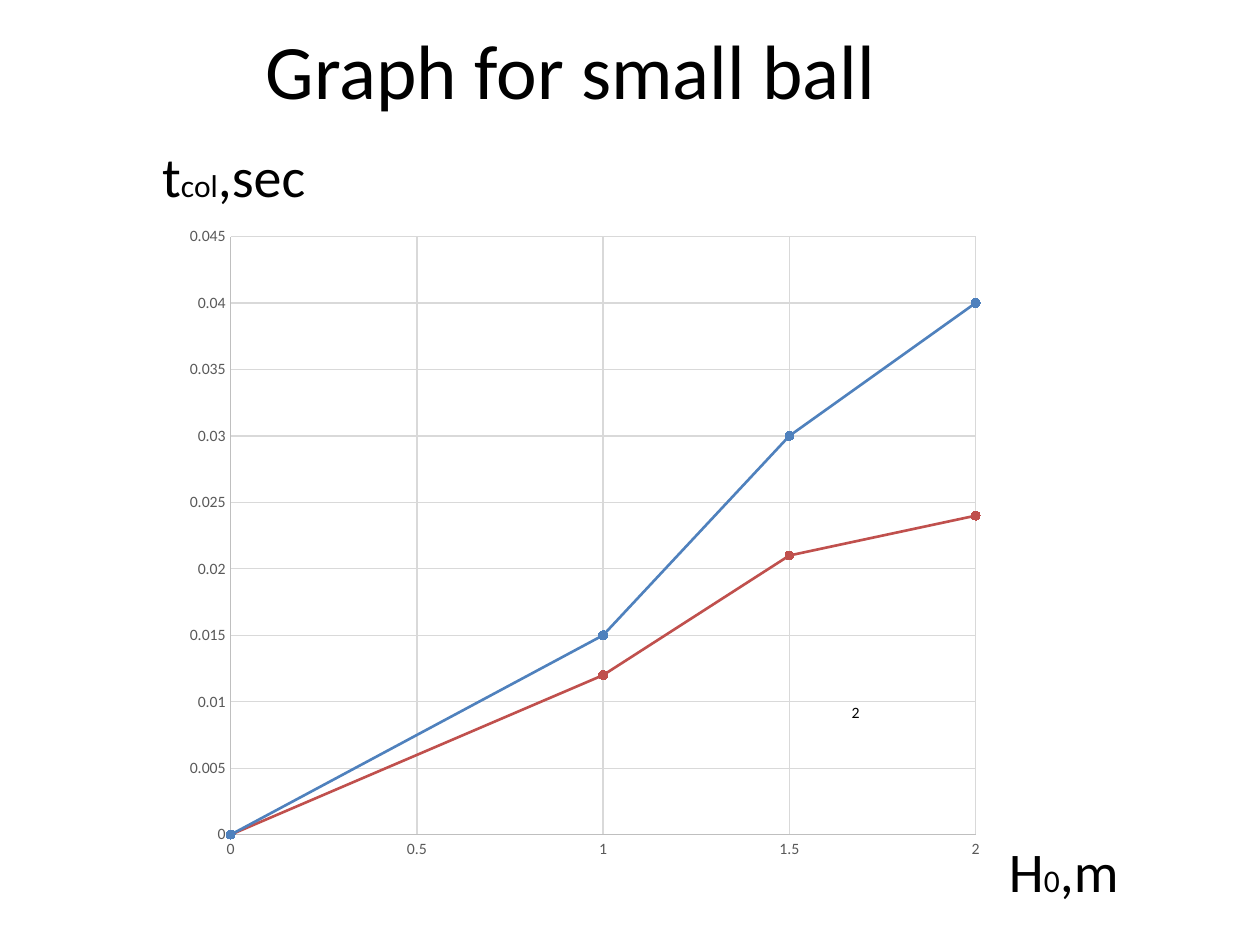
from dataclasses import dataclass

from lxml import etree
from pptx import Presentation
from pptx.chart.data import XyChartData
from pptx.dml.color import RGBColor
from pptx.enum.chart import XL_CHART_TYPE, XL_MARKER_STYLE, XL_TICK_MARK
from pptx.oxml.ns import qn
from pptx.util import Cm, Pt

SCATTER_LINES = XL_CHART_TYPE.XY_SCATTER_LINES
CIRCLE = XL_MARKER_STYLE.CIRCLE
NO_TICK = XL_TICK_MARK.NONE


@dataclass(frozen=True)
class Theme:
    font: str = "Calibri"
    text: str = "000000"
    axis_text: str = "595959"
    axis_line: str = "BFBFBF"
    grid: str = "D9D9D9"
    series: tuple = ("4F81BD", "C0504D")
    title_size: int = 44
    label_size: int = 32
    subscript_size: int = 18
    small_size: int = 9


THEME = Theme()

DROP_HEIGHTS = (0, 1, 1.5, 2)
COLLISION_TIMES = {
    "Series 1": (0, 0.015, 0.03, 0.04),
    "Series 2": (0, 0.012, 0.021, 0.024),
}

# Boxes in centimetres: left, top, width, height
TITLE_BOX = (5.11, 0.33, 13.41, 2.11)
CHART_BOX = (3.51, 4.32, 16.61, 13.26)
PLOT_BOX = (1.14, 0.45, 15.02, 12.06)  # relative to the chart
TIME_BOX = (3.02, 2.72, 3.8, 1.6)
HEIGHT_BOX = (20.09, 16.74, 3.61, 1.6)
NOTE_BOX = (17.17, 14.05, 0.23, 0.56)


def add_text(page, box, *spans, side_inset=0.25):
    """Add one paragraph made of (text, size) spans."""
    shape = page.shapes.add_textbox(*map(Cm, box))
    frame = shape.text_frame
    frame.word_wrap = True
    frame.margin_left = frame.margin_right = Cm(side_inset)
    para = frame.paragraphs[0]
    for text, size in spans:
        span = para.add_run()
        span.text = text
        span.font.name = THEME.font
        span.font.size = Pt(size)
        span.font.color.rgb = RGBColor.from_string(THEME.text)


def add_axis_label(page, box, symbol, subscript, unit):
    add_text(page, box, (symbol, THEME.label_size),
             (subscript, THEME.subscript_size), (unit, THEME.label_size))


def style_line(line, color, width):
    line.color.rgb = RGBColor.from_string(color)
    line.width = Pt(width)


def style_axis(axis, maximum, step):
    axis.minimum_scale, axis.maximum_scale, axis.major_unit = 0, maximum, step
    axis.major_tick_mark = axis.minor_tick_mark = NO_TICK
    axis.has_major_gridlines = True
    style_line(axis.major_gridlines.format.line, THEME.grid, 0.75)
    style_line(axis.format.line, THEME.axis_line, 0.75)
    labels = axis.tick_labels
    labels.number_format, labels.number_format_is_linked = "General", False
    labels.font.name = THEME.font
    labels.font.size = Pt(THEME.small_size)
    labels.font.color.rgb = RGBColor.from_string(THEME.axis_text)


def fix_plot_area(chart, plot_box, chart_box):
    """Give the inner plot area a fixed place in the chart."""
    area = chart.element.find(".//" + qn("c:plotArea"))
    for old in area.findall(qn("c:layout")):
        area.remove(old)
    layout = etree.Element(qn("c:layout"))
    area.insert(0, layout)
    manual = etree.SubElement(layout, qn("c:manualLayout"))
    settings = {"layoutTarget": "inner", "xMode": "edge", "yMode": "edge"}
    for tag, length, whole in zip("xywh", plot_box, chart_box[2:] * 2):
        settings[tag] = length / whole
    for tag, value in settings.items():
        etree.SubElement(manual, qn("c:" + tag)).set("val", str(value))


def add_time_chart(page, box):
    data = XyChartData()
    for name, times in COLLISION_TIMES.items():
        points = data.add_series(name)
        for height, time in zip(DROP_HEIGHTS, times):
            points.add_data_point(height, time)
    chart = page.shapes.add_chart(SCATTER_LINES, *map(Cm, box), data).chart
    chart.has_legend = False
    chart.has_title = False
    chart.font.name = THEME.font
    style_axis(chart.category_axis, 2, 0.5)
    style_axis(chart.value_axis, 0.045, 0.005)
    chart.plots[0].vary_by_categories = False
    for series, color in zip(chart.plots[0].series, THEME.series):
        series.smooth = False
        style_line(series.format.line, color, 1.5)
        marker = series.marker
        marker.style, marker.size = CIRCLE, 5
        marker.format.fill.solid()
        marker.format.fill.fore_color.rgb = RGBColor.from_string(color)
        style_line(marker.format.line, color, 0.75)
    fix_plot_area(chart, PLOT_BOX, box)


def build_graph_slide(deck):
    page = deck.slides.add_slide(deck.slide_layouts[6])
    # Graph and the note on it
    add_time_chart(page, CHART_BOX)
    add_text(page, NOTE_BOX, ("2", THEME.small_size), side_inset=0)
    # Title
    add_text(page, TITLE_BOX, ("Graph for small ball", THEME.title_size))
    # Axis names
    add_axis_label(page, TIME_BOX, "t", "col", ",sec")
    add_axis_label(page, HEIGHT_BOX, "H", "0", ",m")


def main():
    deck = Presentation()
    deck.slide_width, deck.slide_height = Cm(25.4), Cm(19.05)
    build_graph_slide(deck)
    deck.save("out.pptx")


if __name__ == "__main__":
    main()
